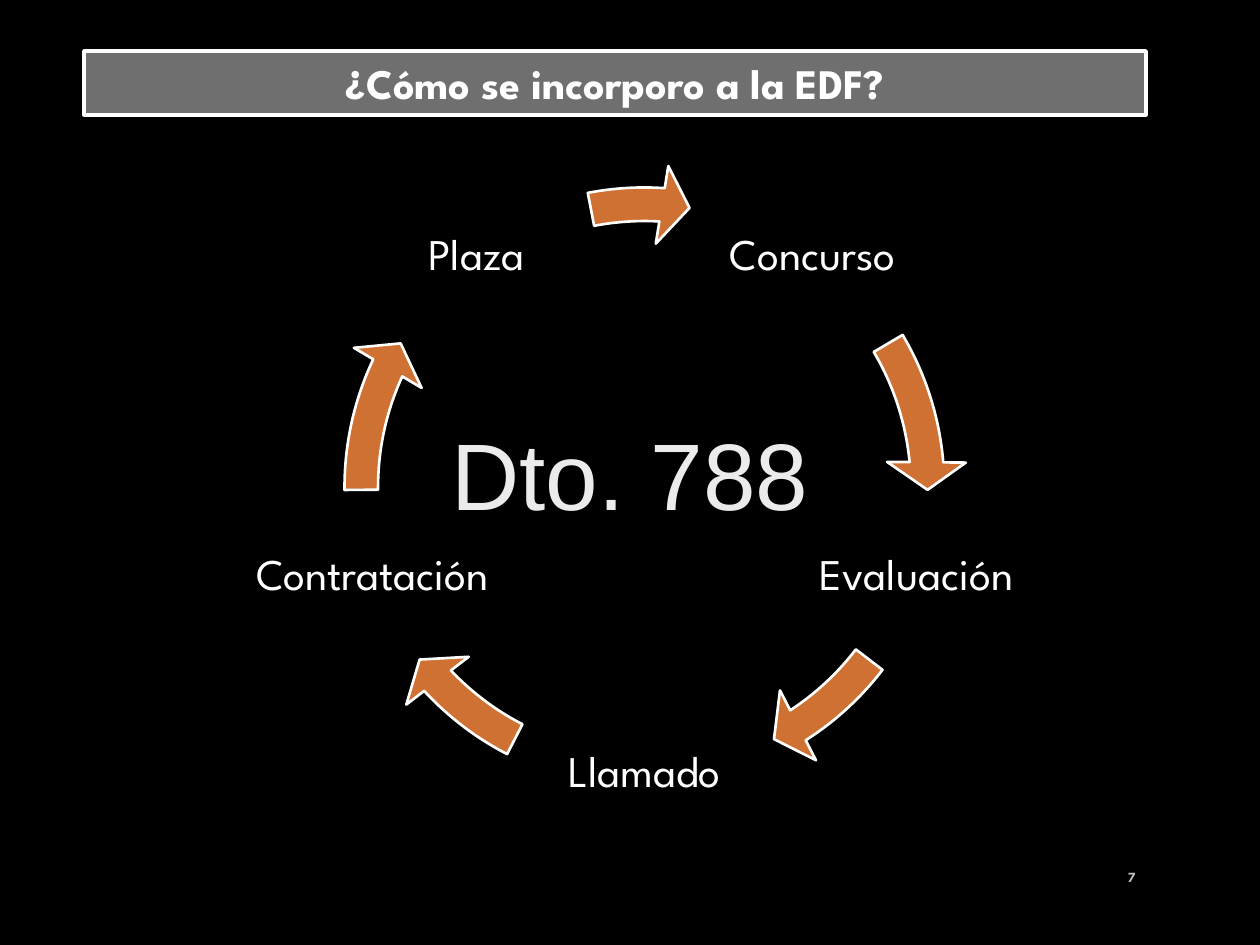
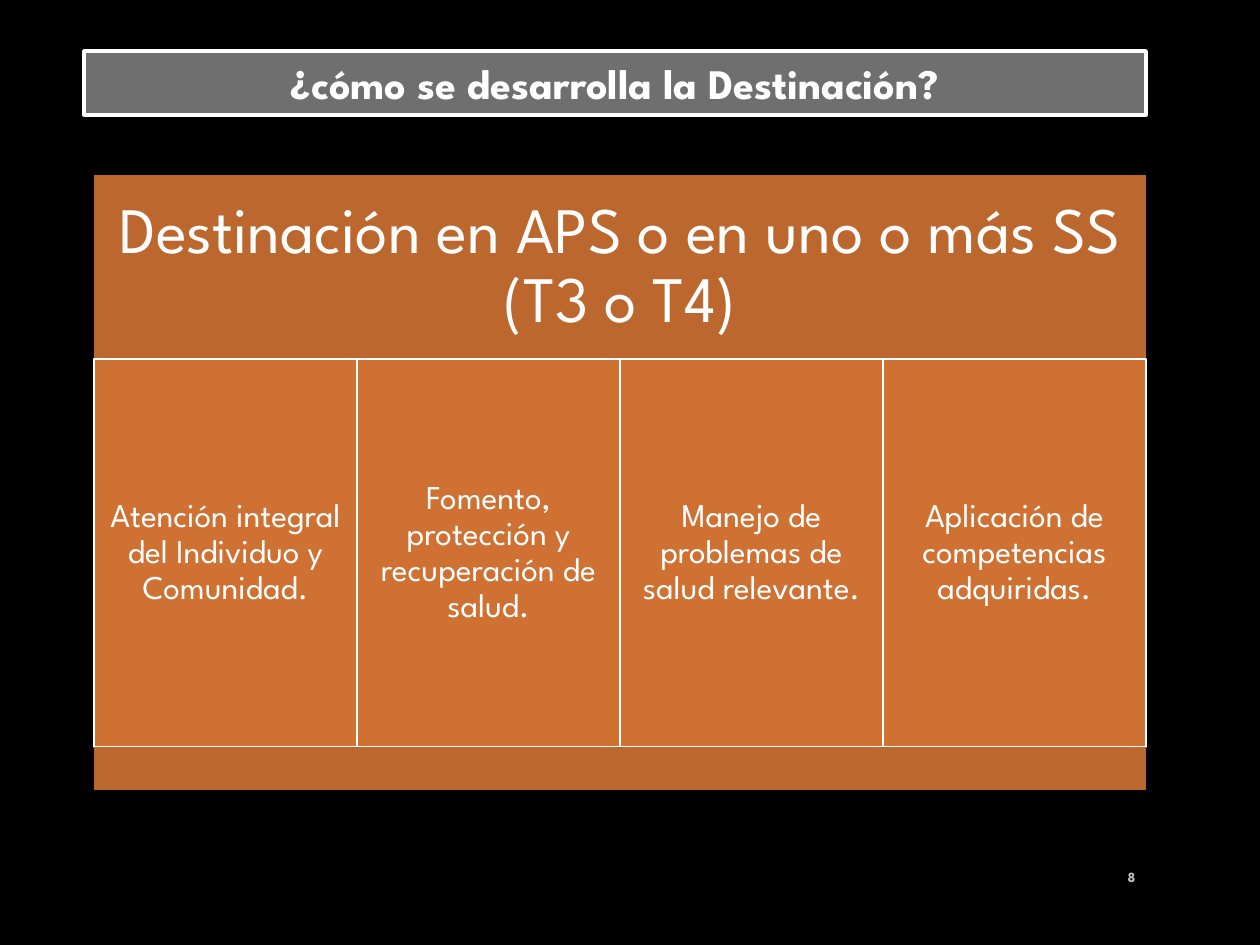
from math import cos, radians, sin

from pptx import Presentation
from pptx.dml.color import RGBColor
from pptx.enum.shapes import MSO_SHAPE as SHAPE
from pptx.enum.text import MSO_ANCHOR as ANCHOR, MSO_AUTO_SIZE as AUTO, PP_ALIGN as ALIGN
from pptx.util import Emu, Pt

PX_PER_INCH = 126
FONT = "League Spartan"
BLACK, WHITE, GRAY = "000000", "FFFFFF", "6F6F6F"
ORANGE, DARK_ORANGE = "CF7133", "BC672E"
PALE, NUMBER_GRAY = "EBEBEB", "BFBFBF"

STEP_ANGLE = 72
FIRST_ANGLE = -54
LABEL_RADIUS, LABEL_H = 286, 172
# Step name, label width, start and end angle of the arrow that follows it
STEPS = [
    ("Concurso", 246, 329.43, 354.9),
    ("Evaluación", 278, 37.46, 57.16),
    ("Llamado", 261, 117.24, 136.95),
    ("Contratación", 297, 179.51, 204.98),
    ("Plaza", 228, 259.12, 273.57),
]
TASKS = [
    "Atención integral del Individuo y Comunidad.",
    "Fomento, protección y recuperación de salud.",
    "Manejo de problemas de salud relevante.",
    "Aplicación de competencias adquiridas.",
]


def px(n):
    return Emu(round(n * 914400 / PX_PER_INCH))


def color(hex_string):
    return RGBColor.from_string(hex_string)


def add_shape(slide, kind, box, fill, line_pt=0):
    sp = slide.shapes.add_shape(kind, *map(px, box))
    sp.shadow.inherit = False
    sp.fill.solid()
    sp.fill.fore_color.rgb = color(fill)
    if line_pt:
        sp.line.color.rgb = color(WHITE)
        sp.line.width = Pt(line_pt)
    else:
        sp.line.fill.background()
    return sp


def write(sp, text, size, hue=WHITE, font=FONT, bold=False, align=ALIGN.CENTER,
          anchor=ANCHOR.MIDDLE, inset=None, spacing=None, wrap=True):
    tf = sp.text_frame
    tf.word_wrap = wrap
    tf.vertical_anchor = anchor
    if inset is not None:
        tf.margin_left = tf.margin_right = tf.margin_top = tf.margin_bottom = px(inset)
    p = tf.paragraphs[0]
    p.text = text
    p.alignment = align
    p.line_spacing = spacing
    p.font.name = font
    p.font.size = Pt(size)
    p.font.bold = bold
    p.font.color.rgb = color(hue)


def add_text(slide, box, text, size, **style):
    sp = slide.shapes.add_textbox(*map(px, box))
    write(sp, text, size, **style)
    return sp


def add_base_slide(prs, title, number):
    """Add a black slide with its title band and slide number."""
    slide = prs.slides.add_slide(prs.slide_layouts[6])
    slide.background.fill.solid()
    slide.background.fill.fore_color.rgb = color(BLACK)
    add_text(slide, (1091, 852, 57, 50), str(number), 8,
             hue=NUMBER_GRAY, bold=True, align=ALIGN.RIGHT)
    band = add_shape(slide, SHAPE.RECTANGLE, (84, 51, 1062, 64), GRAY, 2)
    write(band, title, 24, bold=True, anchor=ANCHOR.TOP)
    band.text_frame.auto_size = AUTO.SHAPE_TO_FIT_TEXT
    return slide


def add_cycle(slide, box):
    """Place the step names on a regular polygon, with arrows on the ring between."""
    x, y, w, h = box
    cx, cy = x + w / 2, y + h / 2
    for i, (name, label_w, start, end) in enumerate(STEPS):
        angle = radians(FIRST_ANGLE + i * STEP_ANGLE)
        left = cx + LABEL_RADIUS * cos(angle) - label_w / 2
        top = cy + LABEL_RADIUS * sin(angle) - LABEL_H / 2
        add_text(slide, (left, top, label_w, LABEL_H), name, 25, inset=4, spacing=0.9)

        arrow = add_shape(slide, SHAPE.CIRCULAR_ARROW, box, ORANGE, 1.5)
        # One degree is 0.6 of an adjustment unit
        values = (0.052, 5.6 * 0.6, end * 0.6, start * 0.6, 0.061)
        for k, value in enumerate(values):
            arrow.adjustments[k] = value


def add_task_panel(slide, box):
    """Stack a heading, a row of equal task columns and a foot band."""
    x, y, w, h = box
    head_h, foot_h = 184, 43
    body_h = h - head_h - foot_h
    col_w = w / len(TASKS)
    head = add_shape(slide, SHAPE.RECTANGLE, (x, y, w, head_h), DARK_ORANGE)
    write(head, "Destinación en APS o en uno o más SS (T3 o T4)", 37, inset=19, spacing=0.9)
    for i, task in enumerate(TASKS):
        col = add_shape(slide, SHAPE.RECTANGLE,
                        (x + i * col_w, y + head_h, col_w, body_h), ORANGE, 1.5)
        write(col, task, 19, inset=10, spacing=0.9)
    add_shape(slide, SHAPE.RECTANGLE, (x, y + h - foot_h, w, foot_h), DARK_ORANGE)


def main():
    prs = Presentation()
    prs.slide_width, prs.slide_height = px(1260), px(945)

    slide = add_base_slide(prs, "¿Cómo se incorporo a la EDF?", 7)
    add_cycle(slide, (322, 165, 645, 645))
    decree = add_text(slide, (437, 410, 386, 127), "Dto. 788", 54, hue=PALE,
                      font="Arial", anchor=ANCHOR.TOP, wrap=False)
    decree.text_frame.auto_size = AUTO.SHAPE_TO_FIT_TEXT

    slide = add_base_slide(prs, "¿cómo se desarrolla la Destinación?", 8)
    add_task_panel(slide, (94, 175, 1052, 615))

    prs.save("out.pptx")


if __name__ == "__main__":
    main()
